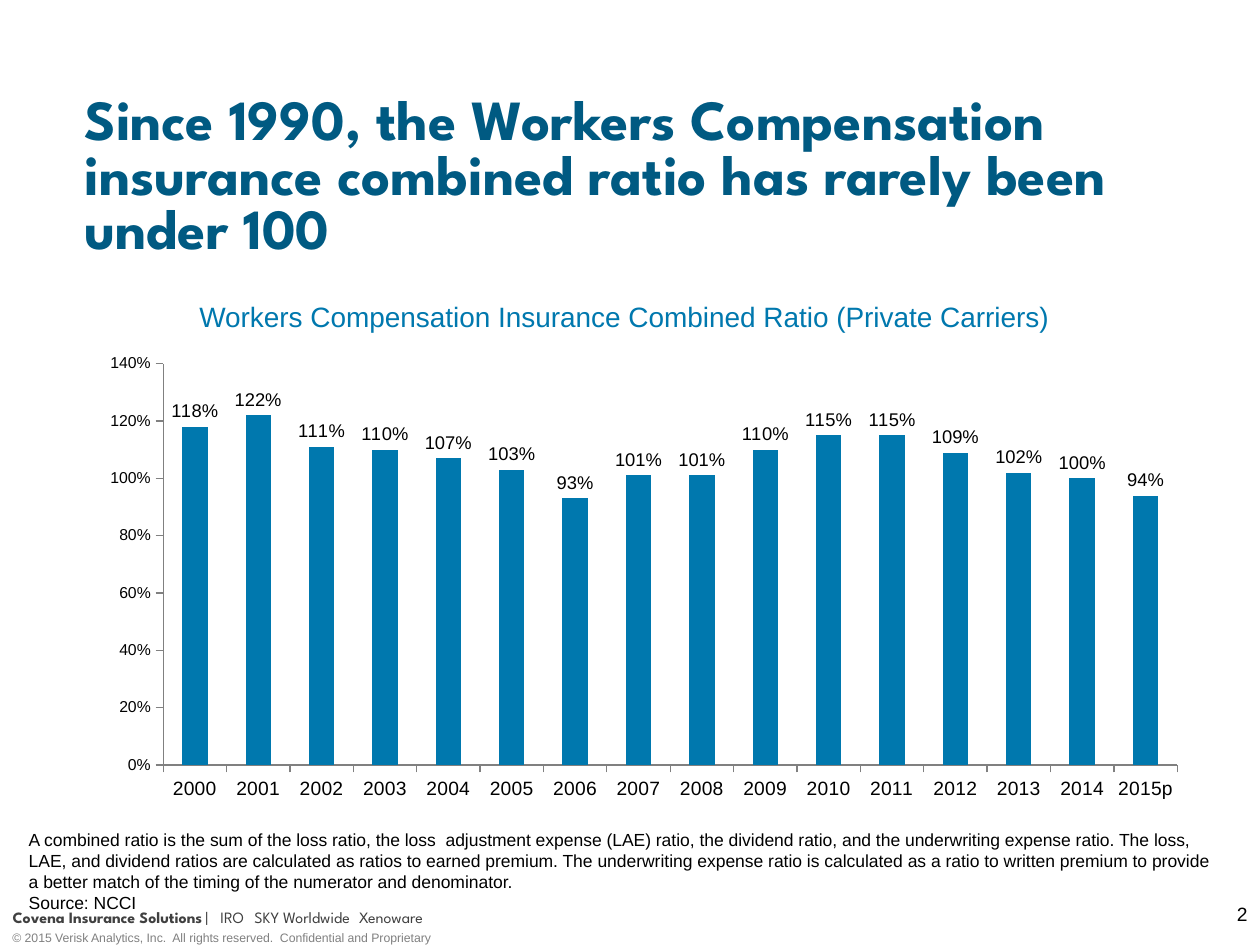
from dataclasses import dataclass

from lxml import etree
from pptx import Presentation
from pptx.chart.data import CategoryChartData
from pptx.dml.color import RGBColor
from pptx.enum import chart as charts, text
from pptx.oxml.ns import qn
from pptx.util import Inches, Pt

NAVY = RGBColor(0x00, 0x5A, 0x82)
BLUE = RGBColor(0x00, 0x78, 0xAE)
BLACK = RGBColor(0x00, 0x00, 0x00)
DARK_GREY = RGBColor(0x40, 0x40, 0x40)
GREY = RGBColor(0x80, 0x80, 0x80)
BODY_FONT = "Arial"
BRAND_FONT = "League Spartan"

RATIOS = [1.18, 1.22, 1.11, 1.10, 1.07, 1.03, 0.93, 1.01,
          1.01, 1.10, 1.15, 1.15, 1.09, 1.02, 1.00, 0.94]
YEARS = [str(year) for year in range(2000, 2015)] + ["2015p"]


@dataclass
class Note:
    content: str
    left: float
    top: float
    width: float
    height: float
    size: float
    color: RGBColor = BLACK
    align: text.PP_ALIGN = text.PP_ALIGN.LEFT


NOTES = [
    Note("© 2015 Verisk Analytics, Inc.  All rights reserved.  Confidential and Proprietary",
         0, 7.33, 6.08, 0.22, 7, GREY),
    Note("A combined ratio is the sum of the loss ratio, the loss  adjustment expense (LAE) ratio, "
         "the dividend ratio, and the underwriting expense ratio. The loss, LAE, and dividend "
         "ratios are calculated as ratios to earned premium. The underwriting expense ratio is "
         "calculated as a ratio to written premium to provide a better match of the timing of "
         "the numerator and denominator.\nSource: NCCI",
         0.13, 6.53, 9.57, 0.77, 10),
    Note("Workers Compensation Insurance Combined Ratio (Private Carriers)",
         1.24, 2.33, 7.43, 0.37, 16, BLUE, text.PP_ALIGN.CENTER),
    Note("2", 7.67, 7.11, 2.33, 0.4, 11, BLACK, text.PP_ALIGN.RIGHT),
]


def set_font(font, size: float, color: RGBColor, name: str = BODY_FONT, bold: bool = False) -> None:
    font.size, font.name, font.bold = Pt(size), name, bold
    font.color.rgb = color


def clear_margins(frame) -> None:
    frame.margin_left = frame.margin_right = frame.margin_top = frame.margin_bottom = 0


def add_note(slide, note: Note) -> None:
    shape = slide.shapes.add_textbox(Inches(note.left), Inches(note.top),
                                     Inches(note.width), Inches(note.height))
    frame = shape.text_frame
    frame.word_wrap = True
    frame.text = note.content
    for paragraph in frame.paragraphs:
        paragraph.alignment = note.align
        set_font(paragraph.runs[0].font, note.size, note.color)


def add_title(slide) -> None:
    title = slide.shapes.title
    title.left, title.top = Inches(0.67), Inches(0.77)
    title.width, title.height = Inches(8.82), Inches(0.59)
    frame = title.text_frame
    frame.text = "Since 1990, the Workers Compensation insurance combined ratio has rarely been under 100"
    frame.word_wrap = True
    frame.auto_size = text.MSO_AUTO_SIZE.NONE
    frame.vertical_anchor = text.MSO_ANCHOR.TOP
    clear_margins(frame)
    paragraph = frame.paragraphs[0]
    paragraph.alignment = text.PP_ALIGN.LEFT
    paragraph.line_spacing = 0.8
    set_font(paragraph.runs[0].font, 32.4, NAVY, BRAND_FONT, True)


def add_brand_line(slide) -> None:
    shape = slide.shapes.add_textbox(Inches(0.1), Inches(7.08), Inches(5.33), Inches(0.4))
    frame = shape.text_frame
    frame.word_wrap = True
    frame.vertical_anchor = text.MSO_ANCHOR.MIDDLE
    clear_margins(frame)
    paragraph = frame.paragraphs[0]
    # Tab stops space out the divisions
    tabs = etree.SubElement(paragraph._p.get_or_add_pPr(), qn("a:tabLst"))
    for position in (1.53, 1.65, 1.92, 2.75):
        etree.SubElement(tabs, qn("a:tab"), pos=str(Inches(position)), algn="l")
    for content, bold in (("Covena Insurance Solutions", True),
                          ("\t|\tIRO\tSKY Worldwide\tXenoware", False)):
        run = paragraph.add_run()
        run.text = content
        set_font(run.font, 9, DARK_GREY, BRAND_FONT, bold)


def add_ratio_chart(slide) -> None:
    data = CategoryChartData(number_format="0%")
    data.categories = YEARS
    data.add_series("Series 1", RATIOS)
    chart = slide.shapes.add_chart(charts.XL_CHART_TYPE.COLUMN_CLUSTERED, Inches(0.7), Inches(2.74),
                                   Inches(8.82), Inches(3.68), data).chart
    chart.has_legend = chart.has_title = False
    set_font(chart.font, 18, BLACK)

    # Columns and their labels
    plot = chart.plots[0]
    plot.gap_width = 150
    plot.vary_by_categories = False
    fill = plot.series[0].format.fill
    fill.solid()
    fill.fore_color.rgb = BLUE
    plot.has_data_labels = True
    labels = plot.data_labels
    labels.show_value = True
    labels.position = charts.XL_LABEL_POSITION.OUTSIDE_END
    labels.number_format, labels.number_format_is_linked = "0%", False
    set_font(labels.font, 10.5, BLACK)

    # Axes
    for axis, size in ((chart.category_axis, 11), (chart.value_axis, 9)):
        axis.has_major_gridlines = False
        axis.major_tick_mark = charts.XL_TICK_MARK.OUTSIDE
        axis.minor_tick_mark = charts.XL_TICK_MARK.NONE
        axis.format.line.color.rgb = GREY
        set_font(axis.tick_labels.font, size, BLACK)
    value_axis = chart.value_axis
    value_axis.minimum_scale, value_axis.maximum_scale = 0, 1.4
    value_axis.major_unit = 0.2
    value_axis.tick_labels.number_format = "0%"
    value_axis.tick_labels.number_format_is_linked = False


def main() -> None:
    presentation = Presentation()
    presentation.slide_width, presentation.slide_height = Inches(10), Inches(7.5)
    slide = presentation.slides.add_slide(presentation.slide_layouts[5])
    add_title(slide)
    add_brand_line(slide)
    add_ratio_chart(slide)
    for note in NOTES:
        add_note(slide, note)
    presentation.save("out.pptx")


if __name__ == "__main__":
    main()
